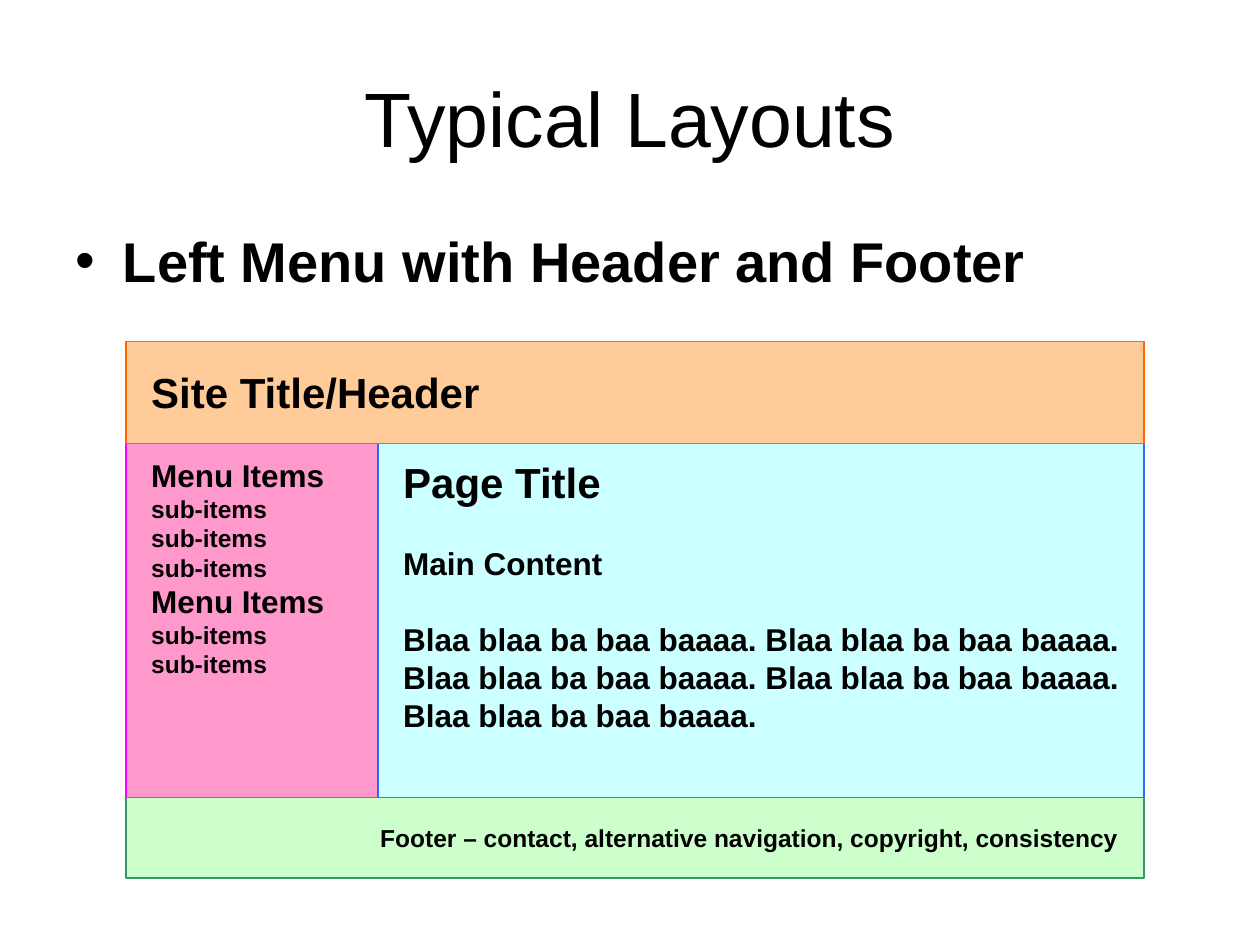
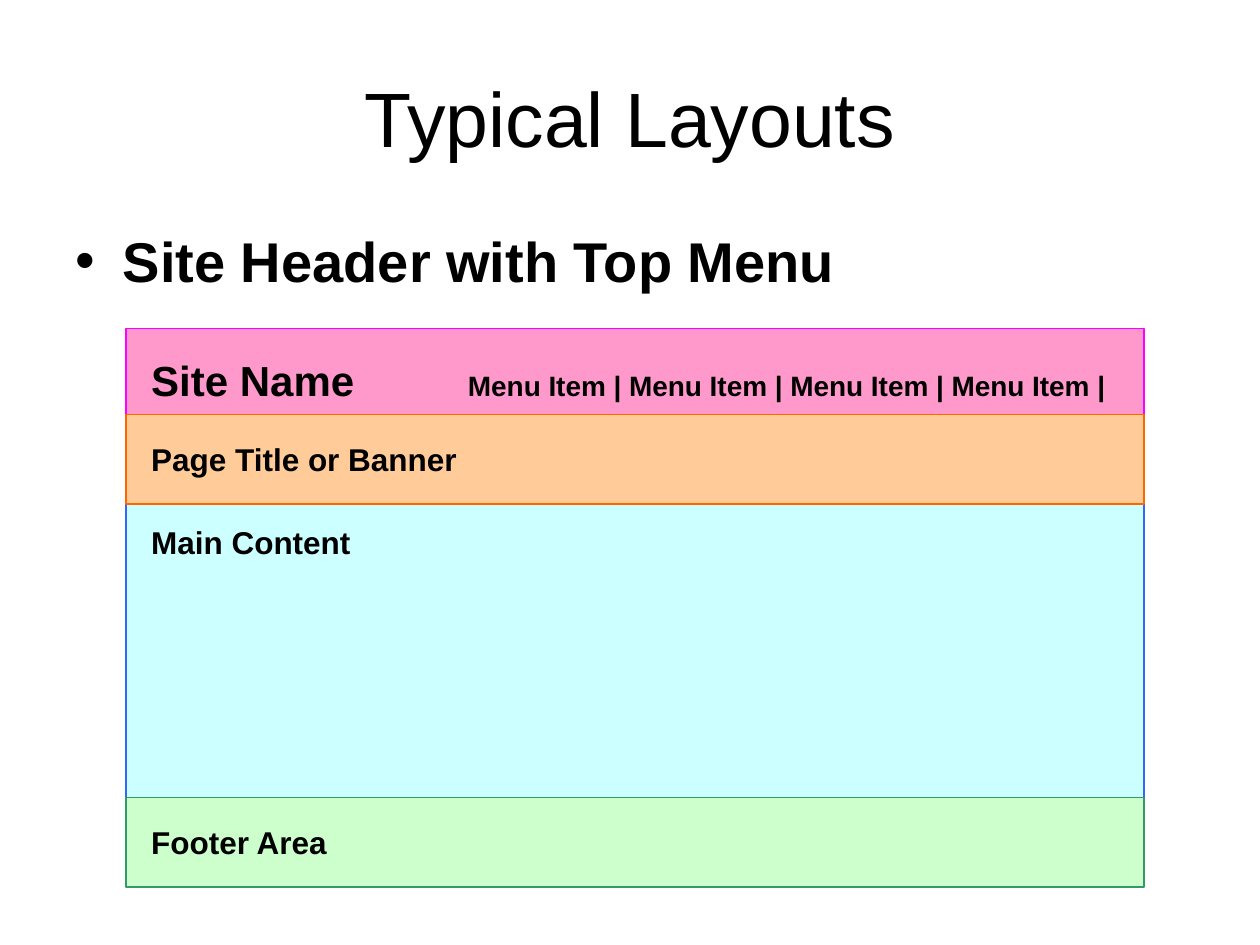
import pptx
import pptx.dml.color
import pptx.enum.shapes
import pptx.enum.text
import pptx.util
from lxml import etree

Pt = pptx.util.Pt
ALIGN = pptx.enum.text.PP_ALIGN
FONT = "Arial"
TITLE = "Typical Layouts"
COLORS = {
    "text": "000000",
    "pink": "FF99CC", "pink_line": "FF00FF",
    "orange": "FFCC99", "orange_line": "FF6600",
    "cyan": "CCFFFF", "cyan_line": "3366FF",
    "green": "CCFFCC", "green_line": "339966",
}
LEFT, WIDTH, MENU_WIDTH = 72, 581.76, 144
PAGE_LEFT, PAGE_WIDTH = LEFT + MENU_WIDTH, WIDTH - MENU_WIDTH
FOOTER_TOP = 455.76
INSET = 14.4
BLANK_LINE = 21.6
MENU_TAB = 181

MENU_ITEM = ("Menu Items", 18)
SUB_ITEM = ("sub-items", 14)
BLAA = " ".join(["Blaa blaa ba baa baaaa."] * 5)

SLIDES = [
    {
        "heading": "Left Menu with Header and Footer",
        "regions": [
            {"color": "pink", "top": 246.24, "height": 210.96, "width": MENU_WIDTH,
             "lines": [[MENU_ITEM], [SUB_ITEM], [SUB_ITEM], [SUB_ITEM],
                       [MENU_ITEM], [SUB_ITEM], [SUB_ITEM]]},
            {"color": "cyan", "top": 246.24, "height": 209.52,
             "left": PAGE_LEFT, "width": PAGE_WIDTH,
             "right_inset": 12, "gap": BLANK_LINE,
             "lines": [[("Page Title", 24)], [("Main Content", 18)], [(BLAA, 18)]]},
            {"color": "orange", "top": 195.12, "height": 58.32,
             "lines": [[("Site Title/Header", 24)]]},
            {"color": "green", "top": FOOTER_TOP, "height": 46.08, "align": ALIGN.RIGHT,
             "lines": [[("Footer – contact, alternative navigation, copyright, consistency", 14)]]},
        ],
    },
    {
        "heading": "Site Header with Top Menu",
        "regions": [
            {"color": "pink", "top": 187.92, "height": 58.32, "tab": MENU_TAB,
             "lines": [[("Site Name", 24), ("\t", 18),
                        ("Menu Item | Menu Item | Menu Item | Menu Item |", 16)]]},
            {"color": "cyan", "top": 284.4, "height": 213.84,
             "lines": [[("Main Content", 18)]]},
            {"color": "orange", "top": 236.88, "height": 51.12,
             "lines": [[("Page Title or Banner", 18)]]},
            {"color": "green", "top": FOOTER_TOP, "height": 51.12,
             "lines": [[("Footer Area", 18)]]},
        ],
    },
]


def rgb(name):
    return pptx.dml.color.RGBColor.from_string(COLORS[name])


def apply_format(target, values):
    for name, value in values.items():
        setattr(target, name, value)


def add_run(paragraph, text, size, bold=True):
    run = paragraph.add_run()
    run.text = text
    apply_format(run.font, {"name": FONT, "size": Pt(size), "bold": bold})
    run.font.color.rgb = rgb("text")


def add_tab_stop(paragraph, position):
    namespace = "{http://schemas.openxmlformats.org/drawingml/2006/main}"
    properties = paragraph._p.get_or_add_pPr()
    tab_list = etree.SubElement(properties, namespace + "tabLst")
    etree.SubElement(tab_list, namespace + "tab", pos=str(int(Pt(position))), algn="l")


def add_region(slide, region):
    shape = slide.shapes.add_shape(
        pptx.enum.shapes.MSO_SHAPE.RECTANGLE,
        Pt(region.get("left", LEFT)), Pt(region["top"]),
        Pt(region.get("width", WIDTH)), Pt(region["height"]))
    shape.shadow.inherit = False
    shape.fill.solid()
    shape.fill.fore_color.rgb = rgb(region["color"])
    shape.line.color.rgb = rgb(region["color"] + "_line")
    shape.line.width = Pt(0.75)
    frame = shape.text_frame
    apply_format(frame, {
        "word_wrap": True,
        "vertical_anchor": pptx.enum.text.MSO_ANCHOR.TOP,
        "margin_left": Pt(INSET), "margin_top": Pt(INSET),
        "margin_bottom": Pt(INSET),
        "margin_right": Pt(region.get("right_inset", INSET)),
    })
    for index, line in enumerate(region["lines"]):
        paragraph = frame.add_paragraph() if index else frame.paragraphs[0]
        apply_format(paragraph, {
            "alignment": region.get("align", ALIGN.LEFT),
            "space_before": Pt(region.get("gap", 0) if index else 0),
        })
        if "tab" in region:
            add_tab_stop(paragraph, region["tab"])
        for text, size in line:
            add_run(paragraph, text, size)


def fill_placeholder(shape, box, text, size, bold):
    for name, value in zip(("left", "top", "width", "height"), box):
        setattr(shape, name, Pt(value))
    add_run(shape.text_frame.paragraphs[0], text, size, bold)


def main():
    presentation = pptx.Presentation()
    apply_format(presentation, {"slide_width": Pt(720), "slide_height": Pt(540)})
    for content in SLIDES:
        slide = presentation.slides.add_slide(presentation.slide_layouts[1])
        title, body = slide.placeholders
        fill_placeholder(title, (36, 21.6, 648, 90), TITLE, 44, False)
        fill_placeholder(body, (36, 126, 648, 356.4), content["heading"], 32, True)
        for region in content["regions"]:
            add_region(slide, region)
    presentation.save("out.pptx")


if __name__ == "__main__":
    main()
